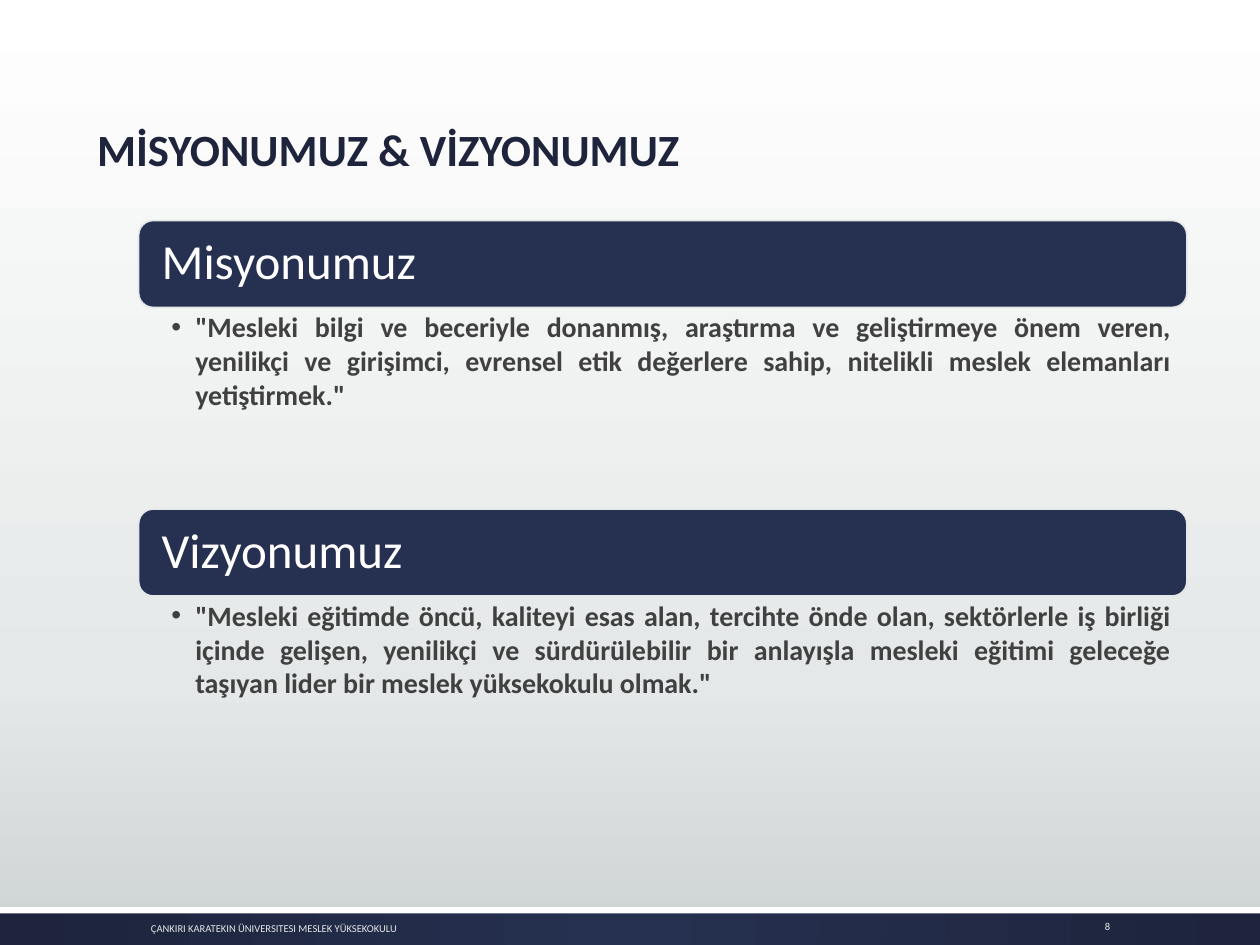
from pptx import Presentation
from pptx.dml.color import RGBColor
from pptx.enum.shapes import MSO_SHAPE
from pptx.enum.text import MSO_ANCHOR, MSO_AUTO_SIZE, PP_ALIGN
from pptx.oxml import parse_xml
from pptx.oxml.ns import nsdecls
from pptx.util import Inches, Pt

RECTANGLE, ROUNDED = MSO_SHAPE.RECTANGLE, MSO_SHAPE.ROUNDED_RECTANGLE
TOP, MIDDLE, BOTTOM = MSO_ANCHOR.TOP, MSO_ANCHOR.MIDDLE, MSO_ANCHOR.BOTTOM
LEFT, RIGHT, JUSTIFY = PP_ALIGN.LEFT, PP_ALIGN.RIGHT, PP_ALIGN.JUSTIFY
NO_AUTOFIT = MSO_AUTO_SIZE.NONE
TWO_CONTENT_LAYOUT = 3

COLORS = {
    "navy": "263050",
    "dark_navy": "1D243C",
    "white": "FFFFFF",
    "pale": "E5E8E8",
    "gray": "CDD2D2",
    "text": "404040",
}
LINEAR_DOWN = '<a:lin ang="5400000" scaled="0"/>'
FROM_CENTER = ('<a:path path="circle"><a:fillToRect l="50000" t="50000" '
               'r="50000" b="50000"/></a:path>')
SECTIONS = [
    ("Misyonumuz",
     '"Mesleki bilgi ve beceriyle donanmış, araştırma ve geliştirmeye önem veren, '
     'yenilikçi ve girişimci, evrensel etik değerlere sahip, nitelikli meslek '
     'elemanları yetiştirmek."'),
    ("Vizyonumuz",
     '"Mesleki eğitimde öncü, kaliteyi esas alan, tercihte önde olan, sektörlerle iş '
     'birliği içinde gelişen, yenilikçi ve sürdürülebilir bir anlayışla mesleki '
     'eğitimi geleceğe taşıyan lider bir meslek yüksekokulu olmak."'),
]


class SlideBuilder:
    font_name = "Calibri"

    def __init__(self, slide):
        self.slide = slide

    def color(self, name):
        return RGBColor.from_string(COLORS[name])

    def gradient(self, fill, owner, stops, direction):
        fill.solid()
        fill.fore_color.rgb = self.color(stops[0][1])
        solid = owner.xpath(".//a:solidFill")[0]
        stop_xml = "".join(
            f'<a:gs pos="{position * 1000}"><a:srgbClr val="{COLORS[name]}"/></a:gs>'
            for position, name in stops)
        solid.getparent().replace(solid, parse_xml(
            f'<a:gradFill {nsdecls("a")} rotWithShape="1">'
            f'<a:gsLst>{stop_xml}</a:gsLst>{direction}</a:gradFill>'))

    def background(self, stops):
        self.gradient(self.slide.background.fill, self.slide.element, stops, LINEAR_DOWN)

    def place(self, shape, box):
        for name, value in zip(("left", "top", "width", "height"), box):
            setattr(shape, name, Inches(value))

    def box(self, kind, box, fill, line=None):
        shape = self.slide.shapes.add_shape(kind, *map(Inches, box))
        shape.shadow.inherit = False
        shape.fill.solid()
        shape.fill.fore_color.rgb = self.color(fill)
        if line:
            shape.line.color.rgb = self.color(line)
            shape.line.width = Pt(1)
        else:
            shape.line.fill.background()
        return shape

    def set_text(self, shape, text, size, color, bold=False, align=LEFT, anchor=MIDDLE,
                 spacing=1.0, insets=(0.1, 0.05, 0.1, 0.05)):
        frame = shape.text_frame
        frame.text = text
        paragraph = frame.paragraphs[0]
        left, top, right, bottom = map(Inches, insets)
        formats = [
            (frame, {"word_wrap": True, "auto_size": NO_AUTOFIT, "vertical_anchor": anchor,
                     "margin_left": left, "margin_top": top,
                     "margin_right": right, "margin_bottom": bottom}),
            (paragraph, {"alignment": align, "line_spacing": spacing,
                         "space_before": Pt(0), "space_after": Pt(0)}),
            (paragraph.runs[0].font, {"name": self.font_name, "size": Pt(size), "bold": bold}),
        ]
        for target, values in formats:
            for name, value in values.items():
                setattr(target, name, value)
        paragraph.runs[0].font.color.rgb = self.color(color)
        return paragraph

    def title(self, text, box):
        shape = self.slide.shapes.title
        self.place(shape, box)
        self.set_text(shape, text, 25.5, "dark_navy", bold=True, anchor=BOTTOM, spacing=0.9)

    def text(self, text, box, **style):
        self.set_text(self.slide.shapes.add_textbox(*map(Inches, box)), text, **style)

    def heading(self, text, box):
        bar = self.box(ROUNDED, box, "navy", line="pale")
        self.set_text(bar, text, 28, "white", spacing=0.9, insets=(0.15, 0.12, 0.15, 0.12))

    def bullet(self, index, text, box):
        shape = self.slide.placeholders[index]
        self.place(shape, box)
        paragraph = self.set_text(shape, text, 16, "text", bold=True, align=JUSTIFY,
                                  anchor=TOP, insets=(0.26, 0.02, 0.12, 0.02))
        properties = paragraph._p.get_or_add_pPr()
        properties.set("marL", str(Inches(0.19)))
        properties.set("indent", str(-Inches(0.19)))
        properties.append(parse_xml(f'<a:buChar {nsdecls("a")} char="•"/>'))

    def footer(self, text, number):
        band = self.box(RECTANGLE, (0, 7.2, 10, 0.3), "navy")
        self.gradient(band.fill, band.element.spPr, [(0, "navy"), (100, "dark_navy")],
                      FROM_CENTER)
        self.box(RECTANGLE, (0, 7.2, 10, 0.05), "white")
        self.text(text, (1.1, 7.24, 5.87, 0.26), size=6, color="pale")
        self.text(number, (8.38, 7.22, 0.53, 0.26), size=6, color="pale", align=RIGHT)


def main():
    presentation = Presentation()
    presentation.slide_width, presentation.slide_height = Inches(10), Inches(7.5)
    layout = presentation.slide_layouts[TWO_CONTENT_LAYOUT]
    builder = SlideBuilder(presentation.slides.add_slide(layout))

    builder.background([(0, "white"), (72, "pale"), (100, "gray")])
    builder.footer("ÇANKIRI KARATEKIN ÜNIVERSITESI MESLEK YÜKSEKOKULU", "8")
    builder.title("MİSYONUMUZ & VİZYONUMUZ", (0.67, 0.51, 8.58, 0.94))

    left, width, bar_height, body_height = 1.1, 8.32, 0.69, 1.6
    for index, (heading, statement) in enumerate(SECTIONS):
        top = 1.75 + index * (bar_height + body_height)
        builder.heading(heading, (left, top, width, bar_height))
        builder.bullet(index + 1, statement, (left, top + bar_height, width, body_height))

    presentation.save("out.pptx")


if __name__ == "__main__":
    main()
